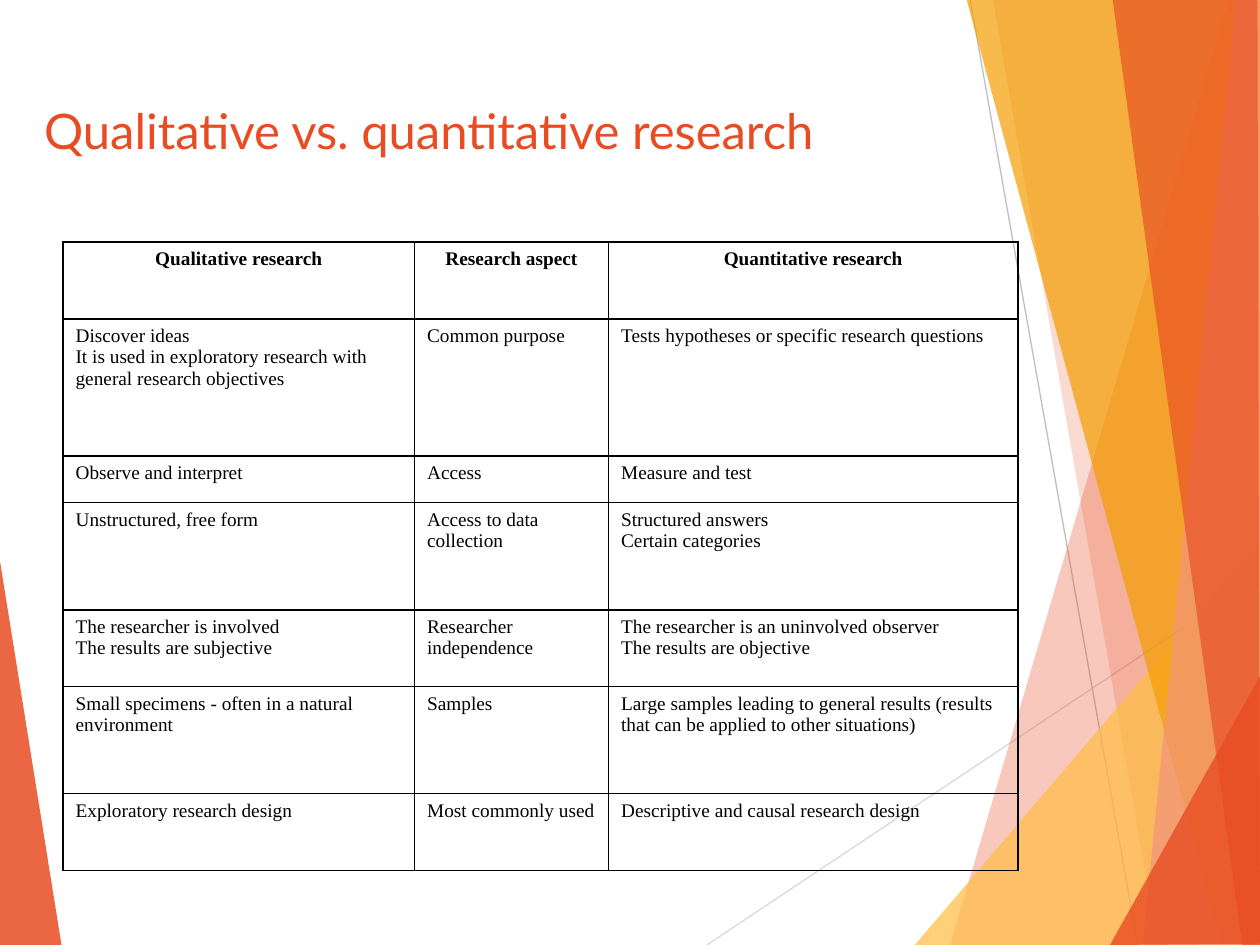
from dataclasses import dataclass

import lxml.etree
import pptx
import pptx.dml.color
import pptx.enum.shapes
import pptx.enum.text
import pptx.oxml.ns
import pptx.util

RGB = pptx.dml.color.RGBColor
ALIGN = pptx.enum.text.PP_ALIGN
qn = pptx.oxml.ns.qn

SCALE = 9144  # EMU per px, 100 px to the inch

BLACK = RGB(0x00, 0x00, 0x00)
RED = RGB(0xE8, 0x4C, 0x22)
SALMON = RGB(0xF1, 0x94, 0x7A)
AMBER = RGB(0xFF, 0xBD, 0x47)
ORANGE = RGB(0xF4, 0x9D, 0x00)
PALE = RGB(0xD9, 0xD9, 0xD9)
GREY = RGB(0xBF, 0xBF, 0xBF)


@dataclass
class Shard:
    points: list[tuple[int, int]]
    color: RGB
    alpha: int  # percent


@dataclass
class Ray:
    start: tuple[int, int]
    end: tuple[int, int]
    color: RGB


LEFT = Shard([(-1, 439), (49, 751), (-1, 750)], RED, 85)
RAYS = [
    Ray((561, 750), (1001, 457), PALE),
    Ray((770, 0), (903, 750), GREY),
]
SHARDS = [
    Shard([(975, 0), (754, 750), (1002, 751), (1001, 1)], RED, 30),
    Shard([(788, -1), (919, 750), (1001, 750), (1001, -1)], RED, 20),
    Shard([(726, 750), (1000, 429), (1001, 750)], AMBER, 72),
    Shard([(767, -1), (970, 750), (1001, 749), (1001, -1)], ORANGE, 70),
    Shard([(981, -1), (907, 750), (1001, 750), (1000, -1)], SALMON, 70),
    Shard([(883, -1), (986, 750), (1000, 750), (998, -1)], RED, 65),
    Shard([(881, 750), (1001, 535), (1001, 749)], RED, 80),
]

COLS = [279, 154, 325]
ROWS = [61, 109, 37, 85, 61, 85, 61]
CELLS = [
    ("Qualitative research", "Research aspect", "Quantitative research"),
    ("Discover ideas\nIt is used in exploratory research with general research objectives",
     "Common purpose", "Tests hypotheses or specific research questions"),
    ("Observe and interpret", "Access", "Measure and test"),
    ("Unstructured, free form", "Access to data collection",
     "Structured answers\nCertain categories"),
    ("The researcher is involved\nThe results are subjective",
     "Researcher independence",
     "The researcher is an uninvolved observer\nThe results are objective"),
    ("Small specimens - often in a natural environment", "Samples",
     "Large samples leading to general results "
     "(results that can be applied to other situations)"),
    ("Exploratory research design", "Most commonly used",
     "Descriptive and causal research design"),
]


def px(size: int) -> pptx.util.Emu:
    return pptx.util.Emu(size * SCALE)


def write(frame, text: str, *, font: str, size: int, color: RGB,
          bold: bool = False, align=ALIGN.LEFT) -> None:
    frame.text = text
    for para in frame.paragraphs:
        para.alignment = align
        for run in para.runs:
            run.font.name = font
            run.font.size = pptx.util.Pt(size)
            run.font.bold = bold
            run.font.color.rgb = color


def draw_shard(shapes, shard: Shard) -> None:
    build = shapes.build_freeform(*shard.points[0], scale=SCALE)
    build.add_line_segments(shard.points[1:], close=True)
    shape = build.convert_to_shape()
    shape.shadow.inherit = False
    shape.line.fill.background()
    shape.fill.solid()
    shape.fill.fore_color.rgb = shard.color
    tint = shape._element.spPr.find(qn("a:solidFill"))[0]
    lxml.etree.SubElement(tint, qn("a:alpha"), val=str(shard.alpha * 1000))


def draw_ray(shapes, ray: Ray) -> None:
    line = shapes.add_connector(
        pptx.enum.shapes.MSO_CONNECTOR.STRAIGHT,
        *map(px, ray.start + ray.end))
    line.line.color.rgb = ray.color
    line.line.width = pptx.util.Pt(0.75)
    lxml.etree.SubElement(line._element.spPr, qn("a:effectLst"))


def add_edges(cell, color: RGB, width: int) -> None:
    props = cell._tc.get_or_add_tcPr()
    for spot, side in enumerate(("lnL", "lnR", "lnT", "lnB")):
        edge = lxml.etree.Element(qn(f"a:{side}"), w=str(pptx.util.Pt(width)))
        fill = lxml.etree.SubElement(edge, qn("a:solidFill"))
        lxml.etree.SubElement(fill, qn("a:srgbClr"), val=str(color))
        props.insert(spot, edge)  # borders come before the fill


def draw_table(shapes, left: int, top: int) -> None:
    frame = shapes.add_table(len(ROWS), len(COLS), px(left), px(top),
                             px(sum(COLS)), px(sum(ROWS)))
    table = frame.table
    table.first_row = table.horz_banding = False
    for col, width in zip(table.columns, COLS):
        col.width = px(width)
    for r, (height, texts) in enumerate(zip(ROWS, CELLS)):
        table.rows[r].height = px(height)
        head = r == 0
        for c, text in enumerate(texts):
            cell = table.cell(r, c)
            cell.fill.background()
            add_edges(cell, BLACK, 1)
            write(cell.text_frame, text, font="Times New Roman", size=11,
                  color=BLACK, bold=head,
                  align=ALIGN.CENTER if head else ALIGN.LEFT)


def main() -> None:
    deck = pptx.Presentation()
    deck.slide_width, deck.slide_height = px(1000), px(750)
    slide = deck.slides.add_slide(deck.slide_layouts.get_by_name("Title Only"))
    shapes = slide.shapes

    # Backdrop
    draw_shard(shapes, LEFT)
    for ray in RAYS:
        draw_ray(shapes, ray)
    for shard in SHARDS:
        draw_shard(shapes, shard)

    # Title, brought in front of the backdrop
    title = shapes.title
    title.left, title.top, title.width, title.height = map(px, (25, 75, 775, 136))
    title.text_frame.vertical_anchor = pptx.enum.text.MSO_ANCHOR.TOP
    write(title.text_frame, "Qualitative vs. quantitative research",
          font="Lato", size=28, color=RED)
    shapes._spTree.append(title._element)

    # Comparison table
    draw_table(shapes, 50, 192)

    deck.save("out.pptx")


if __name__ == "__main__":
    main()
